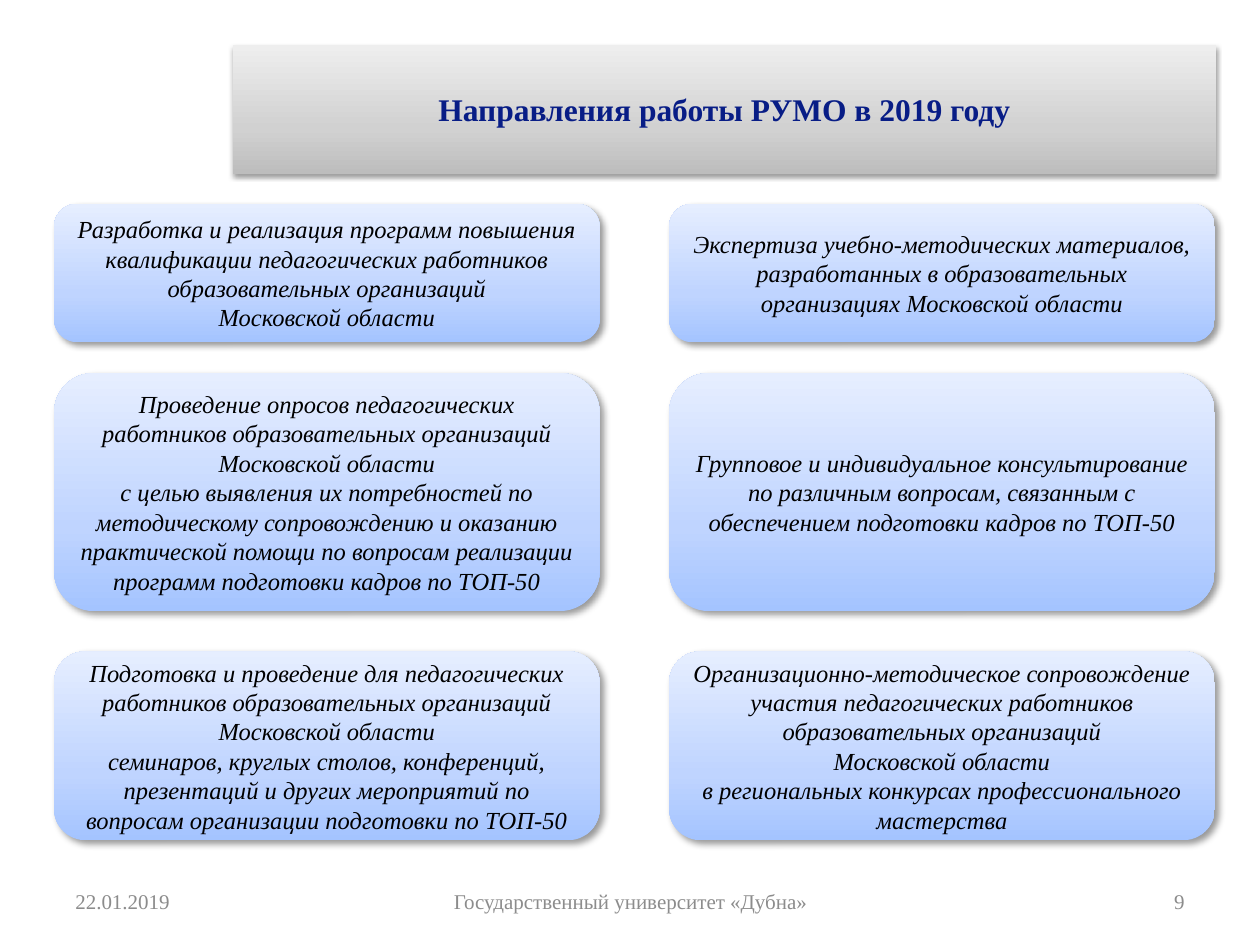
"""Build the slide on the 2019 working directions of the regional methodical association."""
from copy import deepcopy

from lxml import etree
from pptx import Presentation
from pptx.dml.color import RGBColor
from pptx.enum.shapes import MSO_SHAPE
from pptx.enum.text import MSO_ANCHOR, PP_ALIGN
from pptx.oxml.ns import qn
from pptx.util import Cm, Pt

ROUNDED = MSO_SHAPE.ROUNDED_RECTANGLE
MIDDLE = MSO_ANCHOR.MIDDLE
LEFT, CENTER, RIGHT = PP_ALIGN.LEFT, PP_ALIGN.CENTER, PP_ALIGN.RIGHT

NAVY = RGBColor(0x08, 0x1D, 0x86)
BLACK = RGBColor(0, 0, 0)
GREY = RGBColor(0x8C, 0x8C, 0x8C)
SILVERS = [RGBColor(0xBD, 0xBD, 0xBD), RGBColor(0xD1, 0xD1, 0xD1), RGBColor(0xEE, 0xEE, 0xEE)]
BLUES = [RGBColor(0xA4, 0xC4, 0xFF), RGBColor(0xBF, 0xD4, 0xFF), RGBColor(0xE6, 0xEE, 0xFF)]
STOPS = [0, 0.35, 1]

TITLE_FONT = {"name": "Times New Roman", "size": Pt(18), "bold": True}
CARD_FONT = {"name": "Times New Roman", "size": Pt(14), "italic": True}
FOOTER_FONT = {"name": "Times New Roman", "size": Pt(12)}


def write(shape, lines, align, font_format, color):
    frame = shape.text_frame
    frame.word_wrap = True
    frame.vertical_anchor = MIDDLE
    frame.text = "\n".join(lines)
    for paragraph in frame.paragraphs:
        paragraph.alignment = align
        for key, value in font_format.items():
            setattr(paragraph.font, key, value)
        paragraph.font.color.rgb = color


def shade(shape, colors, alpha, blur, distance, angle):
    shape.fill.gradient()
    shape.fill.gradient_angle = 90
    properties = shape._element.spPr
    stop_list = properties.find(qn("a:gradFill")).find(qn("a:gsLst"))
    stop_list.append(deepcopy(stop_list[-1]))
    for stop, color, position in zip(shape.fill.gradient_stops, colors, STOPS):
        stop.color.rgb = color
        stop.position = position
    shape.line.fill.background()
    shape.shadow.inherit = False
    shadow = etree.SubElement(
        properties.find(qn("a:effectLst")), qn("a:outerShdw"),
        blurRad=str(Pt(blur)), dist=str(Pt(distance)), dir=str(angle * 60000),
        algn="tl", rotWithShape="0")
    black = etree.SubElement(shadow, qn("a:srgbClr"), val="000000")
    etree.SubElement(black, qn("a:alpha"), val=str(alpha * 1000))


presentation = Presentation()
presentation.slide_width, presentation.slide_height = Cm(25.4), Cm(19.05)
slide = presentation.slides.add_slide(presentation.slide_layouts[5])

title = slide.shapes.title
title.left, title.top, title.width, title.height = Cm(4.7), Cm(0.91), Cm(19.81), Cm(2.59)
write(title, ["Направления работы РУМО в 2019 году"], CENTER, TITLE_FONT, NAVY)
shade(title, SILVERS, 38, 3.1, 1.6, 90)

footers = [
    (1.27, 5.92, LEFT, "22.01.2019"),
    (8.69, 8.05, CENTER, "Государственный университет «Дубна»"),
    (18.21, 5.92, RIGHT, "9"),
]
for left, width, align, text in footers:
    footer = slide.shapes.add_textbox(Cm(left), Cm(17.65), Cm(width), Cm(1.02))
    write(footer, [text], align, FOOTER_FONT, GREY)

REGION = "Московской области"
card_lefts = [1.09, 13.49]
card_rows = [
    (4.11, 2.79, [
        ["Разработка и реализация программ повышения квалификации педагогических "
         "работников образовательных организаций", REGION],
        ["Экспертиза учебно-методических материалов, разработанных в образовательных "
         "организациях Московской области"],
    ]),
    (7.52, 4.8, [
        ["Проведение опросов педагогических работников образовательных организаций", REGION,
         "с целью выявления их потребностей по методическому сопровождению и оказанию "
         "практической помощи по вопросам реализации программ подготовки кадров по ТОП-50"],
        ["Групповое и индивидуальное консультирование по различным вопросам, связанным с "
         "обеспечением подготовки кадров по ТОП-50"],
    ]),
    (13.13, 3.81, [
        ["Подготовка и проведение для педагогических работников образовательных организаций",
         REGION,
         "семинаров, круглых столов, конференций, презентаций и других мероприятий по "
         "вопросам организации подготовки по ТОП-50"],
        ["Организационно-методическое сопровождение участия педагогических работников "
         "образовательных организаций", REGION,
         "в региональных конкурсах профессионального мастерства"],
    ]),
]
for top, height, directions in card_rows:
    for left, lines in zip(card_lefts, directions):
        card = slide.shapes.add_shape(ROUNDED, Cm(left), Cm(top), Cm(11), Cm(height))
        write(card, lines, CENTER, CARD_FONT, BLACK)
        shade(card, BLUES, 40, 4, 3, 45)

presentation.save("out.pptx")
